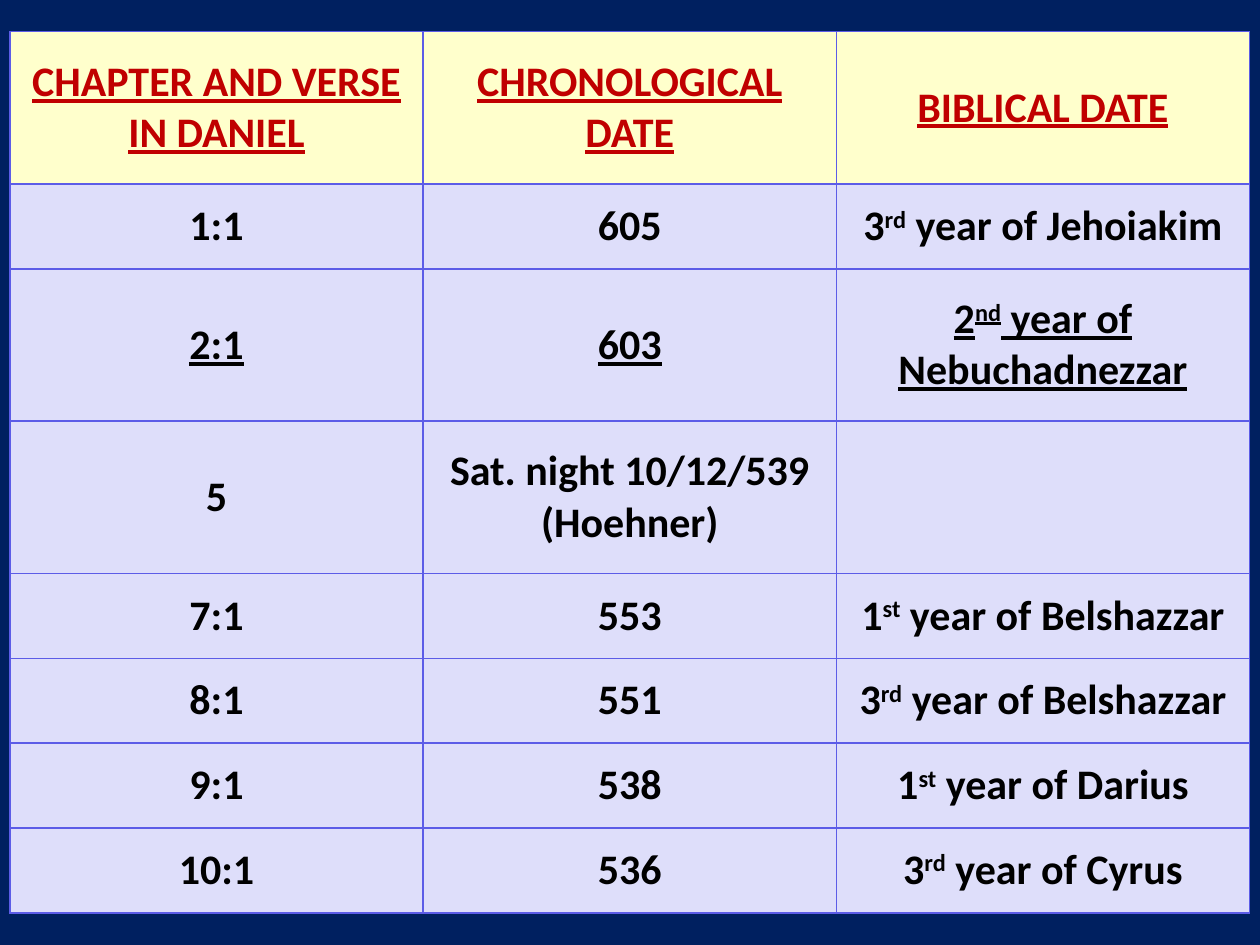
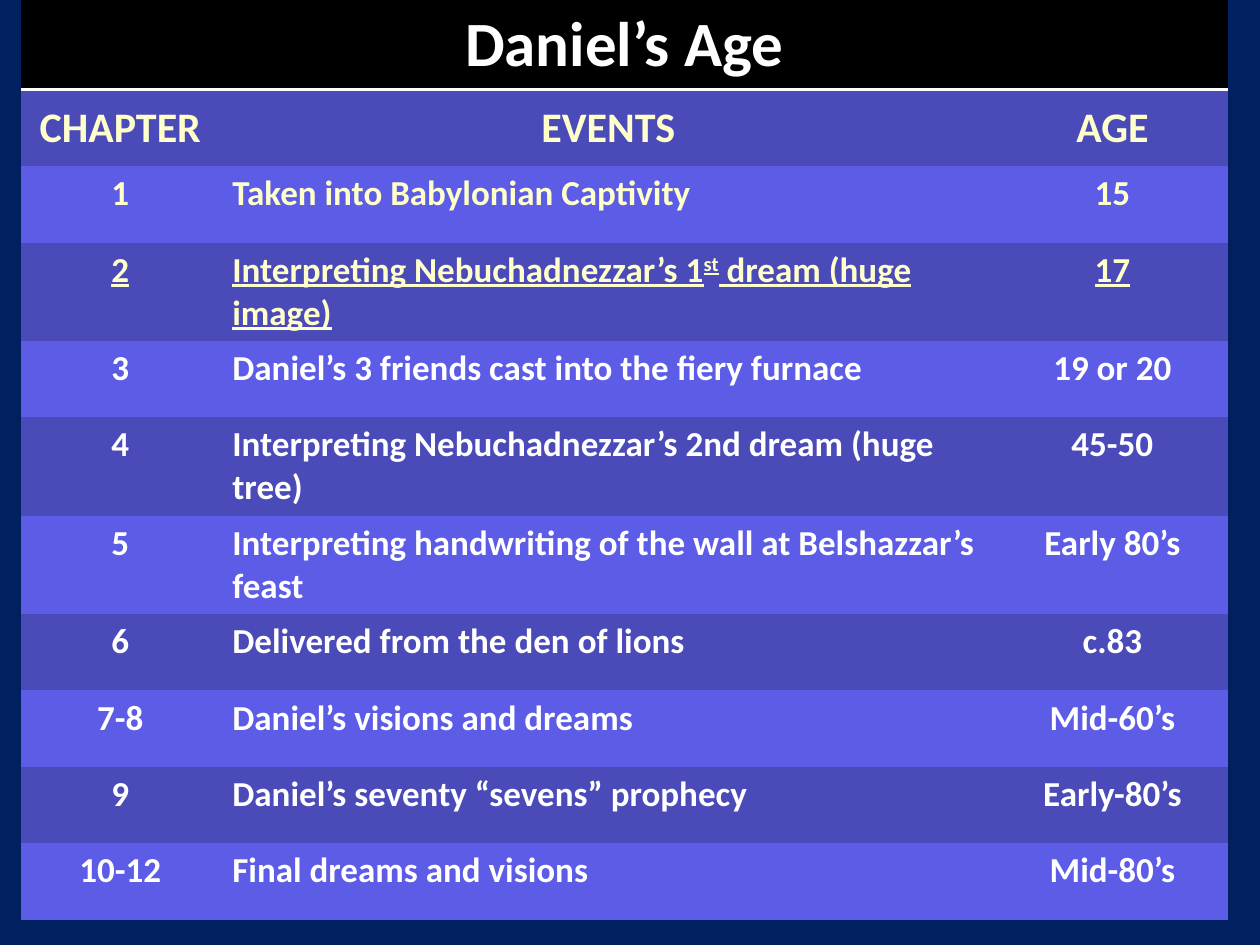
import pptx
import pptx.dml.color
import pptx.enum.text
import pptx.oxml
import pptx.oxml.ns
import pptx.util

Cm = pptx.util.Cm
Pt = pptx.util.Pt
Align = pptx.enum.text.PP_ALIGN
Anchor = pptx.enum.text.MSO_ANCHOR

NAVY = "002060"
CREAM = "FFFFCC"
WHITE = "FFFFFF"
BLACK = "000000"
RED = "C00000"
LILAC = "DEDEFA"
BLUE = "5C5CE7"
DUSK = "4A4AB9"
PLAIN = "{2D5ABB26-0587-4C30-8999-92F81FD0307C}"

DATES = [
    ("CHAPTER AND VERSE IN DANIEL", "CHRONOLOGICAL DATE", "BIBLICAL DATE"),
    ("1:1", "605", "3^rd^ year of Jehoiakim"),
    ("2:1", "603", "2^nd^ year of Nebuchadnezzar"),
    ("5", "Sat. night 10/12/539 (Hoehner)", ""),
    ("7:1", "553", "1^st^ year of Belshazzar"),
    ("8:1", "551", "3^rd^ year of Belshazzar"),
    ("9:1", "538", "1^st^ year of Darius"),
    ("10:1", "536", "3^rd^ year of Cyrus"),
]

AGES = [
    ("Daniel’s Age", "", ""),
    ("CHAPTER", "EVENTS", "AGE"),
    ("1", "Taken into Babylonian Captivity", "15"),
    ("2", "Interpreting Nebuchadnezzar’s 1^st^ dream (huge image)", "17"),
    ("3", "Daniel’s 3 friends cast into the fiery furnace", "19 or 20"),
    ("4", "Interpreting Nebuchadnezzar’s 2nd dream (huge tree)", "45-50"),
    ("5", "Interpreting handwriting of the wall at Belshazzar’s feast", "Early 80’s"),
    ("6", "Delivered from the den of lions", "c.83"),
    ("7-8", "Daniel’s visions and dreams", "Mid-60’s"),
    ("9", "Daniel’s seventy “sevens” prophecy", "Early-80’s"),
    ("10-12", "Final dreams and visions", "Mid-80’s"),
]


def paint(code):
    return pptx.dml.color.RGBColor.from_string(code)


def write(para, words, size=24, color=BLACK, under=False, align=Align.CENTER):
    para.alignment = align
    for index, part in enumerate(words.split("^")):
        if not part:
            continue
        run = para.add_run()
        run.text = part
        font = run.font
        font.name = "Calibri"
        font.size = Pt(size)
        font.bold = True
        font.underline = under
        font.color.rgb = paint(color)
        if index % 2:
            run._r.get_or_add_rPr().set("baseline", "30000")


class Deck:
    def __init__(self):
        self.show = pptx.Presentation()
        self.show.slide_width = Cm(25.4)
        self.show.slide_height = Cm(19.05)
        self.slide = None

    def page(self):
        self.slide = self.show.slides.add_slide(self.show.slide_layouts[6])
        fill = self.slide.background.fill
        fill.solid()
        fill.fore_color.rgb = paint(NAVY)

    def table(self, left, top, cols, rows):
        frame = self.slide.shapes.add_table(
            len(rows), len(cols), Cm(left), Cm(top), Cm(sum(cols)), Cm(sum(rows)))
        table = frame.table
        table.first_row = False
        table.horz_banding = False
        for style in frame.element.iter(pptx.oxml.ns.qn("a:tableStyleId")):
            style.text = PLAIN
        for col, width in zip(table.columns, cols):
            col.width = Cm(width)
        for row, height in zip(table.rows, rows):
            row.height = Cm(height)
        return table

    def edge(self, cell, sides, color, width):
        props = cell._tc.get_or_add_tcPr()
        space = pptx.oxml.ns.nsdecls("a")
        for side in sides:
            props.append(pptx.oxml.parse_xml(
                f'<a:ln{side} {space} w="{Pt(width)}"><a:solidFill>'
                f'<a:srgbClr val="{color}"/></a:solidFill></a:ln{side}>'))

    def cell(self, cell, words, fill, anchor=Anchor.MIDDLE, **form):
        cell.fill.solid()
        cell.fill.fore_color.rgb = paint(fill)
        cell.vertical_anchor = anchor
        if words:
            write(cell.text_frame.paragraphs[0], words, **form)

    def dates(self):
        self.page()
        tall, low = 3.07, 1.71
        table = self.table(0.2, 0.64, [8.33] * 3, [tall, low, tall, tall] + [low] * 4)
        for r, row in enumerate(DATES):
            head = r == 0
            for c, words in enumerate(row):
                cell = table.cell(r, c)
                self.edge(cell, "LRTB", BLUE, 1)
                self.cell(cell, words, CREAM if head else LILAC,
                          color=RED if head else BLACK, under=r in (0, 2))

    def ages(self):
        self.page()
        tall, low = 1.96, 1.54
        rows = [1.78, low, low, tall, low, tall, tall] + [low] * 4
        table = self.table(0.42, 0, [4.01, 15.67, 4.65], rows)
        table.cell(0, 0).merge(table.cell(0, 2))
        for r, row in enumerate(AGES):
            for c, words in enumerate(row):
                cell = table.cell(r, c)
                if r == 0:
                    self.edge(cell, "B", WHITE, 2)
                    self.cell(cell, words, BLACK, Anchor.TOP, size=36, color=WHITE)
                elif r == 1:
                    self.cell(cell, words, DUSK, color=CREAM)
                else:
                    self.cell(cell, words, DUSK if r % 2 else BLUE, Anchor.TOP,
                              size=20, color=CREAM if r < 4 else WHITE, under=r == 3,
                              align=Align.LEFT if c == 1 else Align.CENTER)


def main():
    deck = Deck()
    deck.dates()
    deck.ages()
    deck.show.save("out.pptx")


if __name__ == "__main__":
    main()
